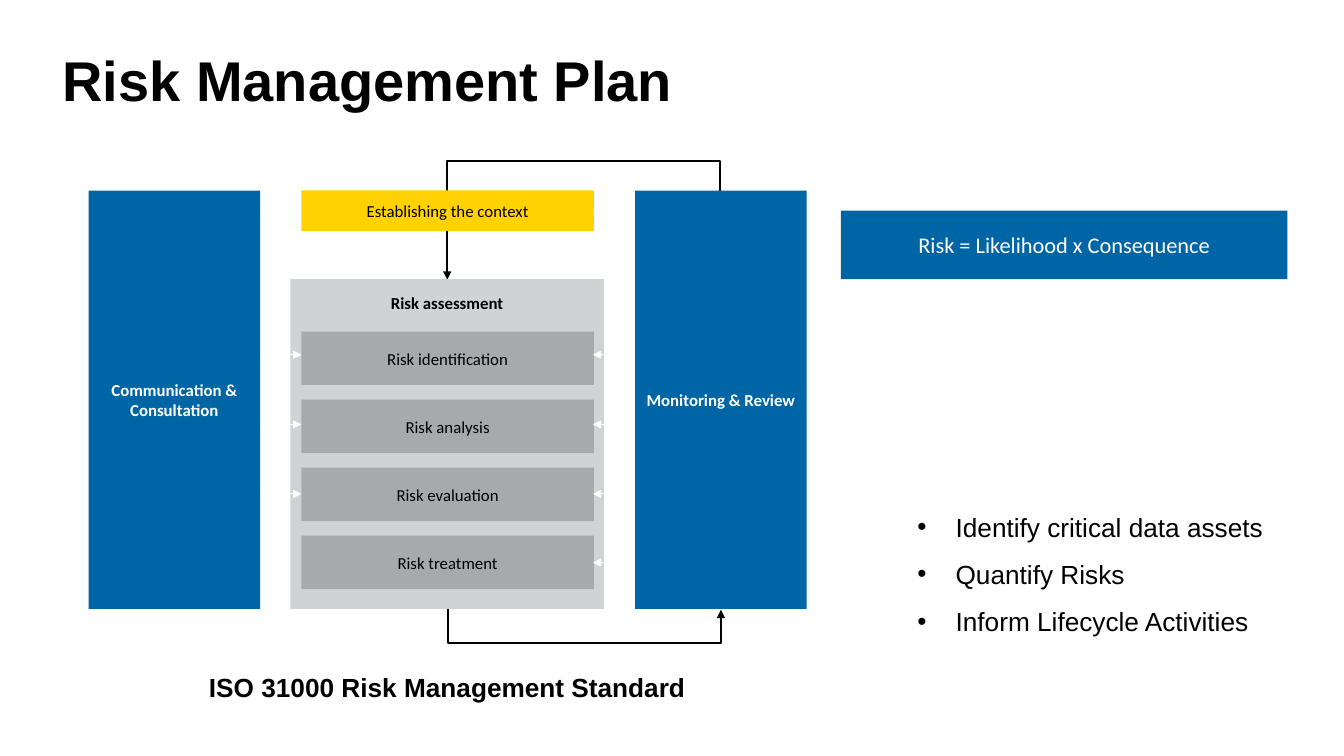
from pptx import Presentation
from pptx.dml.color import RGBColor
from pptx.enum.shapes import MSO_CONNECTOR as Link, MSO_SHAPE as Form
from pptx.enum.text import MSO_ANCHOR as Anchor, PP_ALIGN as Align
from pptx.oxml.ns import qn
from pptx.util import Inches, Pt
from lxml.etree import SubElement as Sub

BLUE, GOLD, PALE, GRAY = "0065A4", "FFD200", "D1D2D4", "A7A9AC"
BLACK, WHITE = "000000", "FFFFFF"


def color(code):
    return RGBColor.from_string(code)


def write(frame, text, size=12, font="Calibri", ink=BLACK, bold=False,
          align=Align.CENTER, anchor=Anchor.MIDDLE, space=None,
          pad=(0.1, 0.05), top=None, bullet=False):
    """Fill a text frame, one paragraph per line of text."""
    frame.word_wrap = True
    frame.vertical_anchor = anchor
    frame.margin_left = frame.margin_right = Inches(pad[0])
    frame.margin_top = Inches(pad[1] if top is None else top)
    frame.margin_bottom = Inches(pad[1])
    for i, line in enumerate(text.split("\n")):
        para = frame.add_paragraph() if i else frame.paragraphs[0]
        para.alignment = align
        para.line_spacing = space
        run = para.add_run()
        run.text = line
        run.font.size = Pt(size)
        run.font.name = font
        run.font.bold = bold
        run.font.color.rgb = color(ink)
        if bullet:
            props = para._p.get_or_add_pPr()
            props.set("marL", str(Inches(0.38)))
            props.set("indent", str(-Inches(0.38)))
            Sub(props, qn("a:buFont"), typeface="Arial")
            Sub(props, qn("a:buChar"), char="•")


def label(slide, box, text, **style):
    area = slide.shapes.add_textbox(*map(Inches, box))
    write(area.text_frame, text, font="Arial", **style)


def block(slide, box, fill, text, **style):
    shape = slide.shapes.add_shape(Form.RECTANGLE, *map(Inches, box))
    shape.shadow.inherit = False
    shape.fill.solid()
    shape.fill.fore_color.rgb = color(fill)
    shape.line.fill.background()
    write(shape.text_frame, text, **style)


def arrow(slide, ends, ink, width, tips, kind=Link.STRAIGHT):
    """Draw a line; tips names the ends that carry an arrowhead."""
    line = slide.shapes.add_connector(kind, *map(Inches, ends))
    line.line.color.rgb = color(ink)
    line.line.width = Pt(width)
    for tip in tips:
        Sub(line.line._get_or_add_ln(), qn(f"a:{tip}"), type="triangle")
    Sub(line._element.spPr, qn("a:effectLst"))
    return line


def elbow(slide, ends, turn, bend, tip):
    """Draw a bent arrow, rotated by turn degrees about its centre."""
    line = arrow(slide, ends, BLACK, 1.5, [tip], Link.ELBOW)
    props = line._element.spPr
    props.find(qn("a:xfrm")).set("rot", str(turn * 60000))
    guides = props.find(qn("a:prstGeom")).find(qn("a:avLst"))
    Sub(guides, qn("a:gd"), name="adj1", fmla=f"val {round(bend * 100000)}")


def main():
    deck = Presentation()
    deck.slide_width, deck.slide_height = Inches(13.33), Inches(7.5)
    slide = deck.slides.add_slide(deck.slide_layouts[6])

    # Title, caption and formula
    label(slide, (0.49, 0.1, 11.62, 1.45), "Risk Management Plan", size=40,
          bold=True, align=Align.LEFT, space=0.9, pad=(0.13, 0.07))
    label(slide, (0.88, 6.37, 7.11, 0.89),
          "ISO 31000 Risk Management Standard", size=18.7, bold=True)
    block(slide, (8.34, 2.09, 4.43, 0.68), BLUE,
          "Risk = Likelihood x Consequence", size=16, ink=WHITE)

    # Feedback from review to context, behind the blocks
    elbow(slide, (6.23, 3.69, 5.35, 0.98), 90, 1.335, "headEnd")

    # Side pillars
    for left, text in ((0.88, "Communication & Consultation"),
                       (6.3, "Monitoring & Review")):
        block(slide, (left, 1.89, 1.7, 4.15), BLUE, text,
              ink=WHITE, bold=True)

    # Context and the assessment steps
    block(slide, (2.99, 1.89, 2.9, 0.4), GOLD, "Establishing the context")
    block(slide, (2.88, 2.77, 3.11, 3.27), PALE, "Risk assessment",
          bold=True, anchor=Anchor.TOP, top=0.13)
    steps = ("identification", "analysis", "evaluation", "treatment")
    for i, step in enumerate(steps):
        block(slide, (2.99, 3.29 + 0.675 * i, 2.9, 0.53), GRAY,
              f"Risk {step}")

    # Outcome of the assessment into review
    elbow(slide, (5.8, 4.69, 5.79, 7.4), 270, 34, "tailEnd")

    # Two-way links between the steps and the pillars
    sides = {2.58: (2.09, 3.52, 4.21, 4.9),
             5.88: (2.09, 3.52, 4.21, 4.9, 5.58)}
    for left, rows in sides.items():
        for y in rows:
            arrow(slide, (left, y, left + 0.41, y), WHITE, 0.75,
                  ["headEnd", "tailEnd"])

    # Goals
    label(slide, (9, 4.74, 4, 1.75),
          "Identify critical data assets\nQuantify Risks\n"
          "Inform Lifecycle Activities",
          size=18.7, align=Align.LEFT, space=1.5, bullet=True)

    deck.save("out.pptx")


if __name__ == "__main__":
    main()
